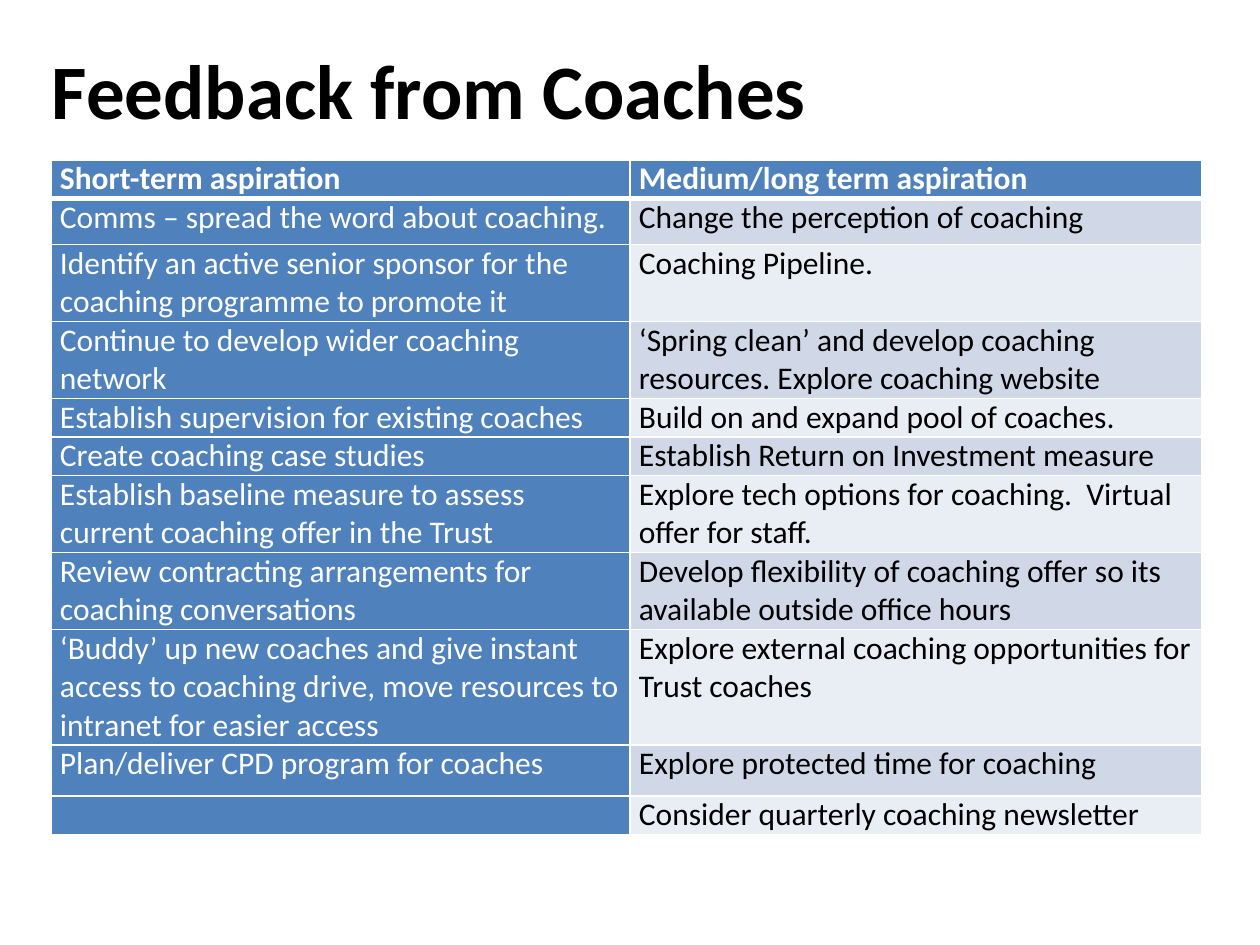
"""Build the coaches' feedback slide: a title above a two-column aspiration table."""
from lxml.etree import SubElement
from pptx import Presentation
from pptx.dml.color import RGBColor
from pptx.enum.text import MSO_ANCHOR, MSO_AUTO_SIZE, PP_ALIGN
from pptx.oxml.ns import qn
from pptx.util import Emu, Pt

TITLE = "Feedback from Coaches"
HEADER = ("Short-term aspiration", "Medium/long term aspiration")
ASPIRATIONS = [
    ("Comms – spread the word about coaching.", "Change the perception of coaching"),
    ("Identify an active senior sponsor for the coaching programme to promote it",
     "Coaching Pipeline."),
    ("Continue to develop wider coaching network",
     "‘Spring clean’ and develop coaching resources. Explore coaching website"),
    ("Establish supervision for existing coaches", "Build on and expand pool of coaches."),
    ("Create coaching case studies", "Establish Return on Investment measure"),
    ("Establish baseline measure to assess current coaching offer in the Trust",
     "Explore tech options for coaching.  Virtual offer for staff."),
    ("Review contracting arrangements for coaching conversations",
     "Develop flexibility of coaching offer so its available outside office hours"),
    ("‘Buddy’ up new coaches and give instant access to coaching drive, "
     "move resources to intranet for easier access",
     "Explore external coaching opportunities for Trust coaches"),
    ("Plan/deliver CPD program for coaches", "Explore protected time for coaching"),
    ("", "Consider quarterly coaching newsletter"),
]

FONT = "Calibri"
WHITE = RGBColor(0xFF, 0xFF, 0xFF)
BLACK = RGBColor(0, 0, 0)
BLUE = RGBColor(0x4F, 0x81, 0xBD)
BANDS = (RGBColor(0xD0, 0xD8, 0xE8), RGBColor(0xE9, 0xED, 0xF4))

TITLE_BOX = (22, 37, 815, 70)
TABLE_LEFT, TABLE_TOP = 51, 160
COLUMN_WIDTHS = (579, 572)
ROW_HEIGHTS = (38, 46, 77, 77, 38, 38, 77, 77, 115, 51, 38)
CELL_INSET = 9


def px(length):
    return Emu(round(length * 914400 / 126))


def write_text(frame, text, size=18, color=BLACK, bold=False, align=PP_ALIGN.LEFT):
    paragraph = frame.paragraphs[0]
    paragraph.alignment = align
    if text:
        run = paragraph.add_run()
        run.text = text
        font = run.font
        font.name, font.size, font.bold = FONT, Pt(size), bold
        font.color.rgb = color


def add_borders(cell, **widths):
    properties = cell._tc.get_or_add_tcPr()
    for side in "LRTB":
        line = SubElement(properties, qn(f"a:ln{side}"), w=str(Pt(widths.get(side, 1))))
        fill = SubElement(line, qn("a:solidFill"))
        SubElement(fill, qn("a:srgbClr"), val=str(WHITE))


def add_title(slide):
    title = slide.shapes.title
    title.left, title.top, title.width, title.height = map(px, TITLE_BOX)
    frame = title.text_frame
    frame.auto_size = MSO_AUTO_SIZE.NONE
    frame.vertical_anchor = MSO_ANCHOR.TOP
    frame.margin_top = px(6)
    write_text(frame, TITLE, size=44, bold=True, align=PP_ALIGN.CENTER)


def add_aspiration_table(slide):
    rows = [HEADER, *ASPIRATIONS]
    table = slide.shapes.add_table(
        len(rows), len(HEADER), px(TABLE_LEFT), px(TABLE_TOP),
        px(sum(COLUMN_WIDTHS)), px(sum(ROW_HEIGHTS))).table
    for column, width in zip(table.columns, COLUMN_WIDTHS):
        column.width = px(width)
    for row, height in zip(table.rows, ROW_HEIGHTS):
        row.height = px(height)
    for row_index, texts in enumerate(rows):
        is_header = row_index == 0
        for column_index, text in enumerate(texts):
            cell = table.cell(row_index, column_index)
            is_blue = is_header or column_index == 0
            cell.margin_left = cell.margin_right = px(CELL_INSET)
            cell.margin_top = cell.margin_bottom = 0
            add_borders(cell, T=3 if row_index == 1 else 1, B=3 if is_header else 1)
            cell.fill.solid()
            cell.fill.fore_color.rgb = BLUE if is_blue else BANDS[(row_index - 1) % 2]
            write_text(cell.text_frame, text, color=WHITE if is_blue else BLACK, bold=is_header)


def main():
    presentation = Presentation()
    presentation.slide_width, presentation.slide_height = px(1260), px(945)
    slide = presentation.slides.add_slide(presentation.slide_layouts[5])
    add_title(slide)
    add_aspiration_table(slide)
    presentation.save("out.pptx")


if __name__ == "__main__":
    main()
